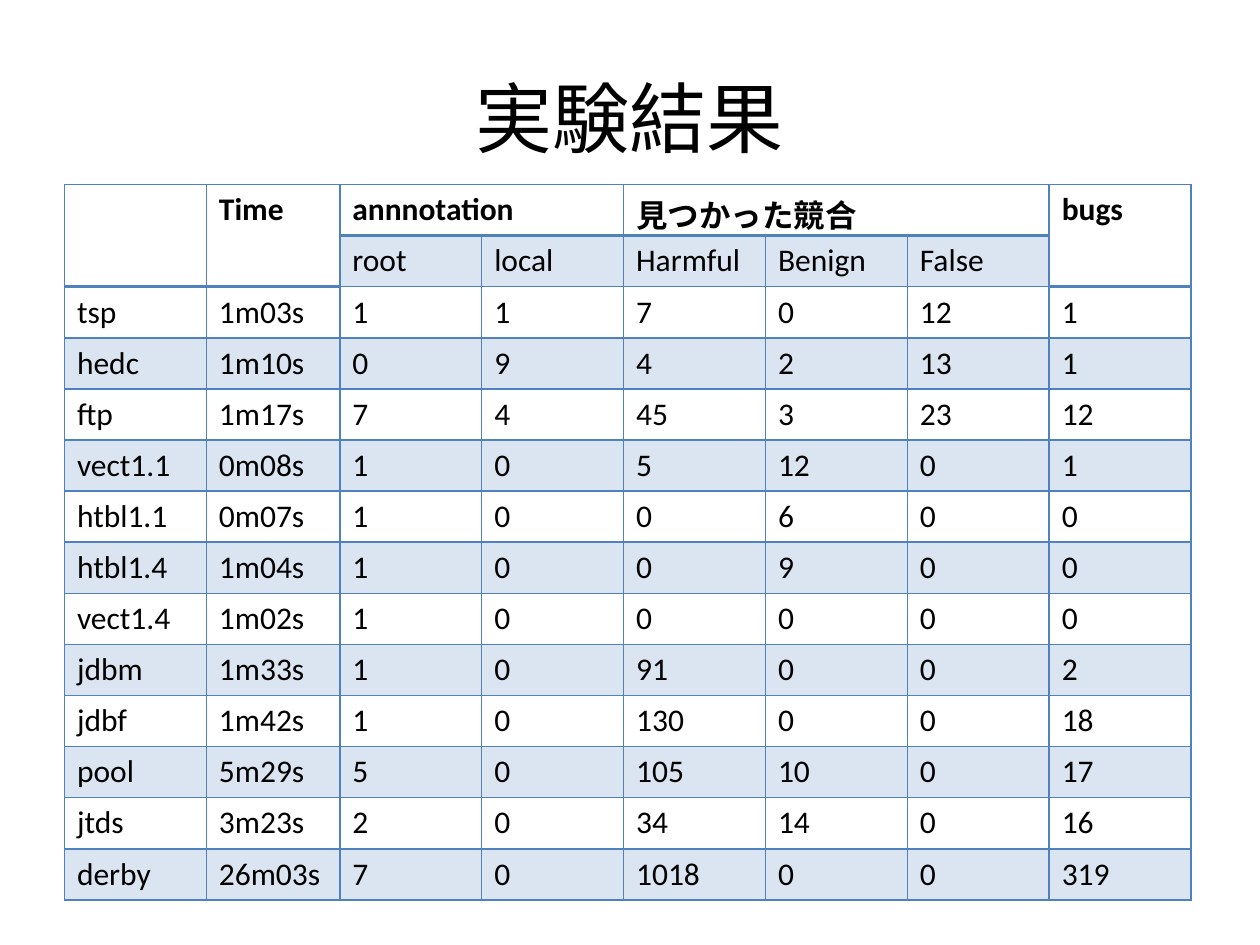
import pptx
import pptx.dml.color
import pptx.enum.text
import pptx.oxml
import pptx.oxml.ns
import pptx.util
from pptx.util import Cm

# Content
TITLE = "実験結果"
HEADINGS = [  # text, first column, rows spanned, columns spanned
    ("", 0, 2, 1),
    ("Time", 1, 2, 1),
    ("annnotation", 2, 1, 2),
    ("見つかった競合", 4, 1, 3),
    ("bugs", 7, 2, 1),
]
SUBHEADINGS = ["root", "local", "Harmful", "Benign", "False"]
FIRST_SUBHEADING = 2
RESULTS = [
    ("tsp", "1m03s", 1, 1, 7, 0, 12, 1),
    ("hedc", "1m10s", 0, 9, 4, 2, 13, 1),
    ("ftp", "1m17s", 7, 4, 45, 3, 23, 12),
    ("vect1.1", "0m08s", 1, 0, 5, 12, 0, 1),
    ("htbl1.1", "0m07s", 1, 0, 0, 6, 0, 0),
    ("htbl1.4", "1m04s", 1, 0, 0, 9, 0, 0),
    ("vect1.4", "1m02s", 1, 0, 0, 0, 0, 0),
    ("jdbm", "1m33s", 1, 0, 91, 0, 0, 2),
    ("jdbf", "1m42s", 1, 0, 130, 0, 0, 18),
    ("pool", "5m29s", 5, 0, 105, 10, 0, 17),
    ("jtds", "3m23s", 2, 0, 34, 14, 0, 16),
    ("derby", "26m03s", 7, 0, 1018, 0, 0, 319),
]
HEADER_ROWS = 2
COLUMN_WIDTHS = [2.86, 2.69] + [2.86] * 6
ROW_HEIGHT = 1.03
BLUE, BLACK = "4F81BD", "000000"
BAND_OPACITY = 20


def color(value):
    return pptx.dml.color.RGBColor.from_string(value)


def write(frame, text, size=18, bold=False, align=None):
    para = frame.paragraphs[0]
    para.alignment = align
    span = para.add_run()
    span.text = str(text)
    span.font.name = "Calibri"
    span.font.size = pptx.util.Pt(size)
    span.font.bold = bold
    span.font.color.rgb = color(BLACK)


def set_borders(cell, top, bottom):
    properties = cell._tc.get_or_add_tcPr()
    sides = [("L", 1), ("R", 1), ("T", top), ("B", bottom)]
    for position, (side, points) in enumerate(sides):
        line = pptx.oxml.parse_xml(
            f'<a:ln{side} {pptx.oxml.ns.nsdecls("a")} w="{pptx.util.Pt(points)}">'
            f'<a:solidFill><a:srgbClr val="{BLUE}"/></a:solidFill></a:ln{side}>')
        properties.insert(position, line)


def set_band(cell, banded):
    if not banded:
        cell.fill.background()
        return
    cell.fill.solid()
    cell.fill.fore_color.rgb = color(BLUE)
    tint = cell._tc.tcPr.find(".//" + pptx.oxml.ns.qn("a:srgbClr"))
    tint.append(pptx.oxml.parse_xml(
        f'<a:alpha {pptx.oxml.ns.nsdecls("a")} val="{BAND_OPACITY * 1000}"/>'))


deck = pptx.Presentation()
deck.slide_width, deck.slide_height = Cm(25.4), Cm(19.05)
page = deck.slides.add_slide(deck.slide_layouts[6])

# Title
box = page.shapes.add_textbox(Cm(1.27), Cm(0.76), Cm(22.86), Cm(3.18))
box.text_frame.word_wrap = True
box.text_frame.vertical_anchor = pptx.enum.text.MSO_ANCHOR.MIDDLE
write(box.text_frame, TITLE, size=44, align=pptx.enum.text.PP_ALIGN.CENTER)

# Empty table grid
row_count = HEADER_ROWS + len(RESULTS)
table = page.shapes.add_table(
    row_count, len(COLUMN_WIDTHS), Cm(1.3), Cm(3.72),
    Cm(sum(COLUMN_WIDTHS)), Cm(ROW_HEIGHT * row_count)).table
for column, width in zip(table.columns, COLUMN_WIDTHS):
    column.width = Cm(width)
for row in table.rows:
    row.height = Cm(ROW_HEIGHT)

# Bands and borders: a thick line closes each heading
subheading_columns = range(FIRST_SUBHEADING, FIRST_SUBHEADING + len(SUBHEADINGS))


def bottom_width(row, column):
    heading = row == 0 or (row == 1 and column not in subheading_columns)
    return 2 if heading else 1


for row in range(row_count):
    for column in range(len(COLUMN_WIDTHS)):
        cell = table.cell(row, column)
        set_band(cell, row % 2 == 1 and (row > 1 or column in subheading_columns))
        top = bottom_width(row - 1, column) if row else 1
        set_borders(cell, top, bottom_width(row, column))

# Headings, subheadings and results
for text, column, rows, columns in HEADINGS:
    cell = table.cell(0, column)
    cell.merge(table.cell(rows - 1, column + columns - 1))
    write(cell.text_frame, text, bold=True)
for column, text in zip(subheading_columns, SUBHEADINGS):
    write(table.cell(1, column).text_frame, text)
for row, values in enumerate(RESULTS, start=HEADER_ROWS):
    for column, value in enumerate(values):
        write(table.cell(row, column).text_frame, value)

deck.save("out.pptx")
